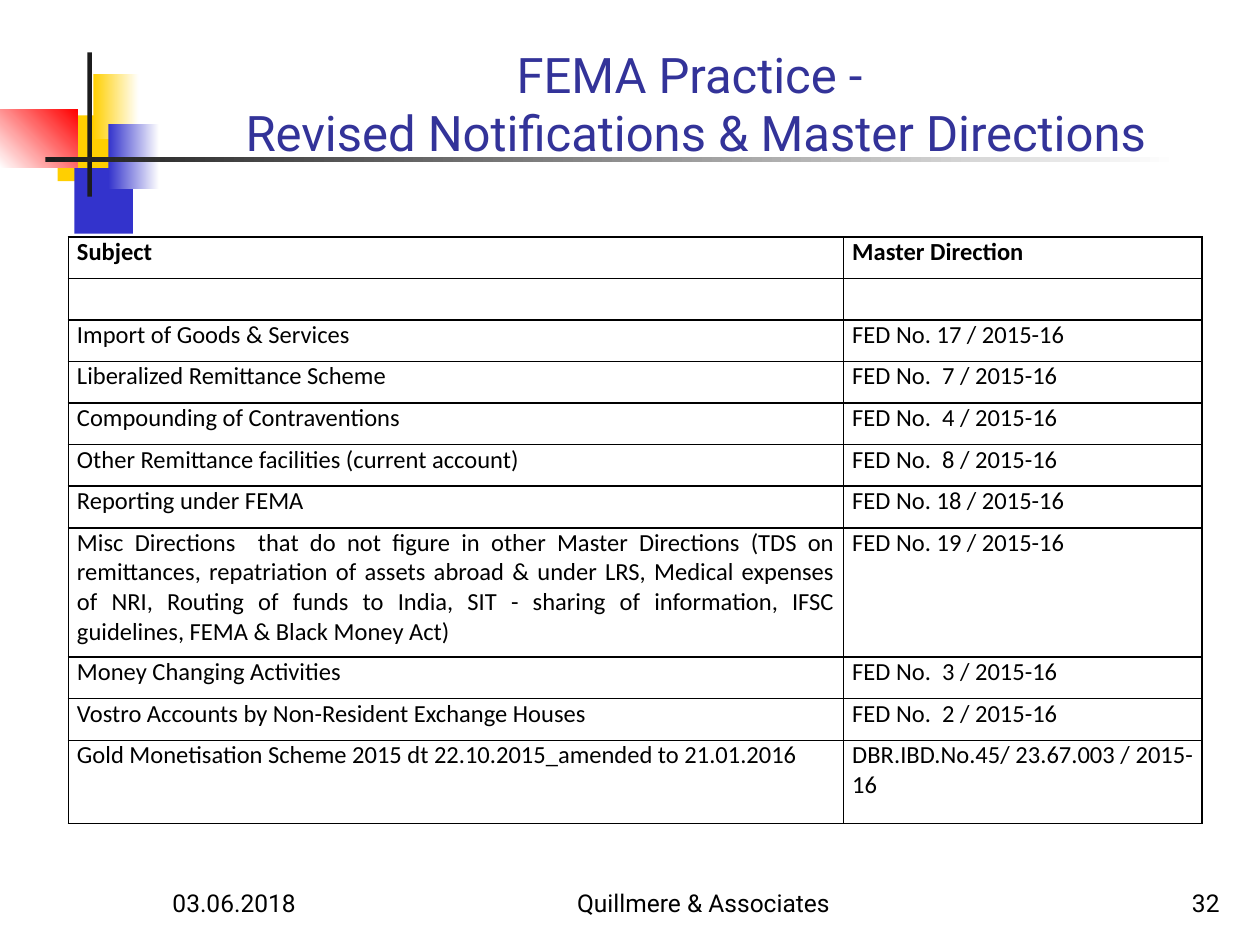
from lxml import etree
from pptx import Presentation
from pptx.dml.color import RGBColor
from pptx.enum import shapes, text
from pptx.oxml.ns import qn
from pptx.util import Pt

LEFT, CENTER, RIGHT, JUSTIFY = (
    text.PP_ALIGN.LEFT, text.PP_ALIGN.CENTER, text.PP_ALIGN.RIGHT, text.PP_ALIGN.JUSTIFY)


def style(p, size, font, color, align, bold=False):
    p.alignment = align
    p.font.size = Pt(size)
    p.font.name = font
    p.font.bold = bold
    p.font.color.rgb = RGBColor.from_string(color)


def add_borders(cell):
    """Draw a black 1 pt line on all four sides of a cell."""
    tcPr = cell._tc.get_or_add_tcPr()
    for i, side in enumerate(("a:lnL", "a:lnR", "a:lnT", "a:lnB")):
        ln = etree.Element(qn(side), w=str(Pt(1)))
        fill = etree.SubElement(ln, qn("a:solidFill"))
        etree.SubElement(fill, qn("a:srgbClr"), val="000000")
        tcPr.insert(i, ln)


prs = Presentation()
prs.slide_width, prs.slide_height = Pt(720), Pt(540)
s = prs.slides.add_slide(prs.slide_layouts[5])

# Corner ornament: left, top, width, height, colours, gradient angle
ornament = [
    (33, 66, 34.5, 37.5, ["FFCF01"], 0),
    (42.5, 96, 33.5, 37.5, ["3333CC"], 0),
    (53.3, 42, 26, 37.5, ["FFCF01", "FFFFFF"], 0),
    (62, 70.8, 29, 37.5, ["3333CC", "FFFFFF"], 0),
    (0, 62.5, 44.5, 33.5, ["FFFFFF", "FF0000"], 45),
    (50, 30, 2.5, 82.5, ["1C1C1C"], 0),
    (26, 90, 648, 2.5, ["1C1C1C", "FFFFFF"], 0),
]
for x, y, w, h, colors, angle in ornament:
    sp = s.shapes.add_shape(shapes.MSO_SHAPE.RECTANGLE, Pt(x), Pt(y), Pt(w), Pt(h))
    sp.shadow.inherit = False
    sp.line.fill.background()
    if len(colors) == 1:
        sp.fill.solid()
        sp.fill.fore_color.rgb = RGBColor.from_string(colors[0])
    else:
        sp.fill.gradient()
        sp.fill.gradient_angle = angle
        for stop, position, color in zip(sp.fill.gradient_stops, (0, 1), colors):
            stop.position = position
            stop.color.rgb = RGBColor.from_string(color)

# Title, in front of the ornament
title = s.shapes.title
title.left, title.top, title.width, title.height = Pt(91), Pt(16.5), Pt(613), Pt(79.5)
tf = title.text_frame
tf.auto_size = text.MSO_AUTO_SIZE.NONE
tf.vertical_anchor = text.MSO_ANCHOR.BOTTOM
p = tf.paragraphs[0]
p.text = "FEMA Practice - \vRevised Notifications & Master Directions"
style(p, 28, "Roboto", "333399", CENTER)
s.shapes._spTree.append(title._element)

# Footer
for x, w, words, align in [
    (91.5, 150, "03.06.2018", LEFT),
    (288, 228, "Quillmere & Associates", CENTER),
    (554, 150, "32", RIGHT),
]:
    tf = s.shapes.add_textbox(Pt(x), Pt(492), Pt(w), Pt(36)).text_frame
    tf.word_wrap = True
    tf.vertical_anchor = text.MSO_ANCHOR.BOTTOM
    tf.text = words
    style(tf.paragraphs[0], 14, "Roboto", "000000", align)

# Table of directions
rows = [
    ("Subject", "Master Direction"),
    ("", ""),
    ("Import of Goods & Services", "FED No. 17 / 2015-16"),
    ("Liberalized Remittance Scheme", "FED No.  7 / 2015-16"),
    ("Compounding of Contraventions", "FED No.  4 / 2015-16"),
    ("Other Remittance facilities (current account)", "FED No.  8 / 2015-16"),
    ("Reporting under FEMA", "FED No. 18 / 2015-16"),
    ("Misc Directions  that do not figure in other Master Directions (TDS on remittances, "
     "repatriation of assets abroad & under LRS, Medical expenses of NRI, Routing of funds "
     "to India, SIT - sharing of information, IFSC guidelines, FEMA & Black Money Act) ",
     "FED No. 19 / 2015-16"),
    ("Money Changing Activities", "FED No.  3 / 2015-16"),
    ("Vostro Accounts by Non-Resident Exchange Houses", "FED No.  2 / 2015-16"),
    ("Gold Monetisation Scheme 2015 dt 22.10.2015_amended to 21.01.2016",
     "DBR.IBD.No.45/ 23.67.003 / 2015-16"),
]
ROW_H = 23.75
tall_rows = {7: 74, 10: 2 * ROW_H}
heights = [tall_rows.get(i, ROW_H) for i in range(len(rows))]
table = s.shapes.add_table(
    len(rows), 2, Pt(39), Pt(135.5), Pt(648), Pt(sum(heights))).table
table.columns[0].width, table.columns[1].width = Pt(443), Pt(205)
for i, (row, height) in enumerate(zip(rows, heights)):
    table.rows[i].height = Pt(height)
    for j, words in enumerate(row):
        cell = table.cell(i, j)
        cell.fill.background()
        cell.margin_left = cell.margin_right = Pt(5)
        cell.margin_top = cell.margin_bottom = 0
        cell.text = words
        style(cell.text_frame.paragraphs[0], 14, "Calibri", "000000", JUSTIFY, bold=i == 0)
        add_borders(cell)

prs.save("out.pptx")
